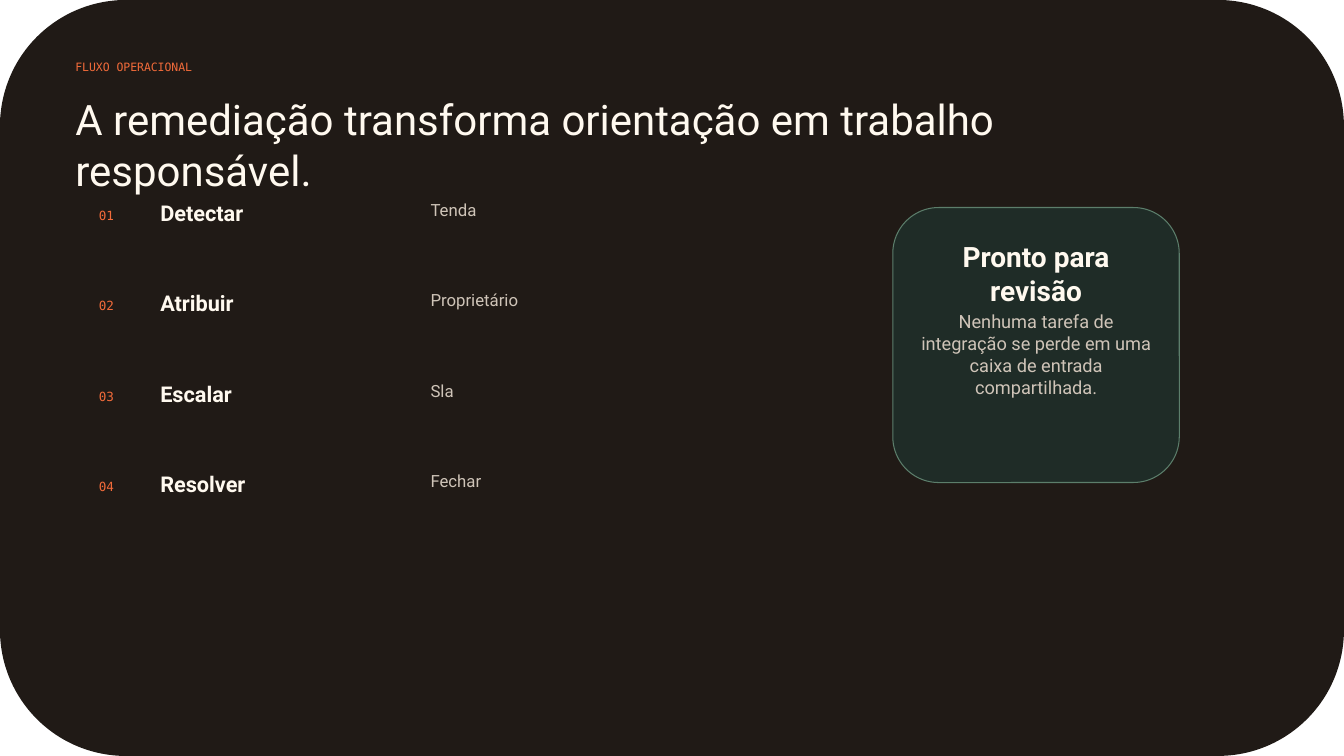
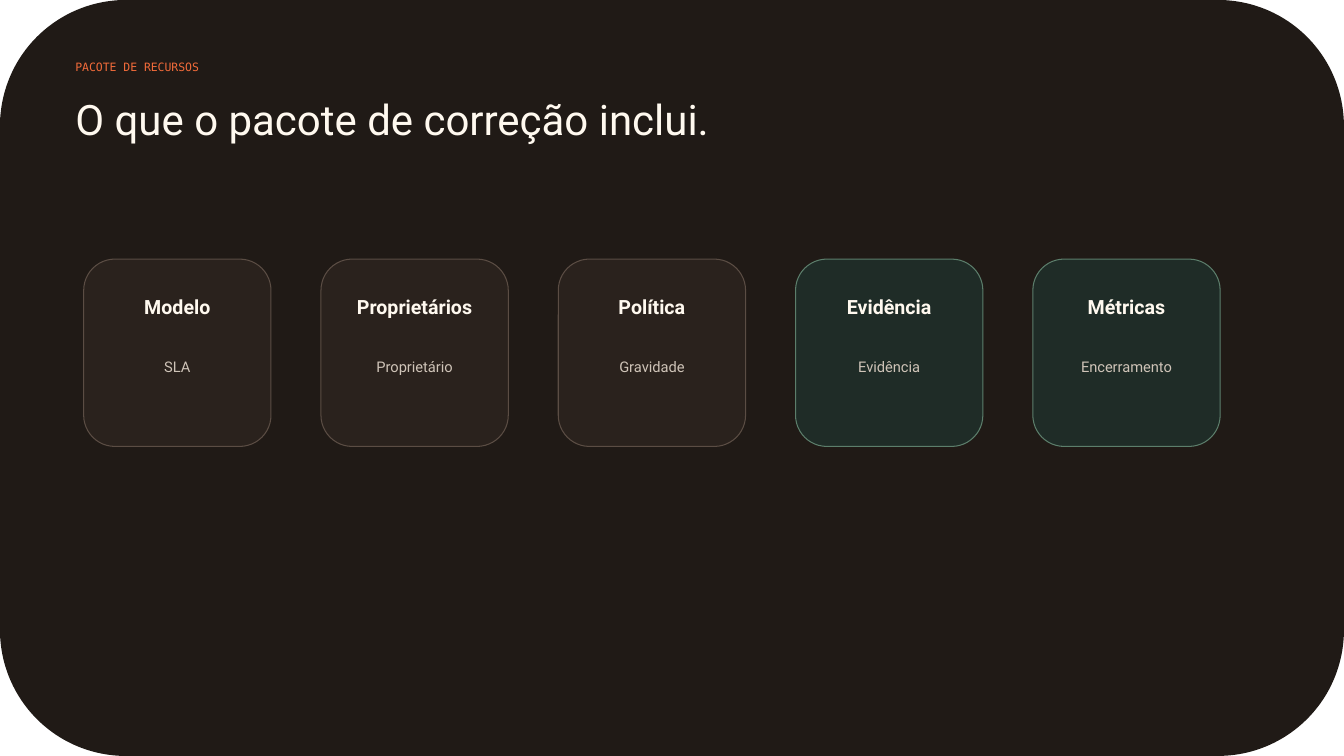
from pptx import Presentation
from pptx.dml.color import RGBColor
from pptx.enum.shapes import MSO_SHAPE as Preset
from pptx.enum.text import MSO_ANCHOR as Anchor, MSO_AUTO_SIZE as AutoSize, PP_ALIGN as Align
from pptx.util import Cm, Pt

SLIDE_WIDTH, SLIDE_HEIGHT = 33.87, 19.05
MARGIN = 1.9
TITLE_ONLY = 5

SANS = "Roboto"
MONO = "DejaVu Sans Mono"

INK = RGBColor(0x20, 0x1A, 0x16)
ORANGE = RGBColor(0xF2, 0x6B, 0x3A)
CREAM = RGBColor(0xFF, 0xF9, 0xEF)
SAND = RGBColor(0xCF, 0xC4, 0xB8)
BROWN_FILL = RGBColor(0x2A, 0x22, 0x1D)
BROWN_LINE = RGBColor(0x5B, 0x4D, 0x44)
GREEN_FILL = RGBColor(0x1F, 0x2C, 0x27)
GREEN_LINE = RGBColor(0x5C, 0x7E, 0x6B)

BROWN = (BROWN_FILL, BROWN_LINE)
GREEN = (GREEN_FILL, GREEN_LINE)

STEPS = [
    ("Detectar", "Tenda"),
    ("Atribuir", "Proprietário"),
    ("Escalar", "Sla"),
    ("Resolver", "Fechar"),
]
RESOURCES = [
    ("Modelo", "SLA", BROWN),
    ("Proprietários", "Proprietário", BROWN),
    ("Política", "Gravidade", BROWN),
    ("Evidência", "Evidência", GREEN),
    ("Métricas", "Encerramento", GREEN),
]


def write_text(shape, text, size, color, font=SANS, bold=False, align=Align.LEFT):
    frame = shape.text_frame
    frame.text = text
    frame.word_wrap = True
    frame.auto_size = AutoSize.NONE
    frame.vertical_anchor = Anchor.TOP
    frame.margin_left = frame.margin_top = frame.margin_right = frame.margin_bottom = 0
    paragraph = frame.paragraphs[0]
    paragraph.alignment = align
    paragraph.font.name = font
    paragraph.font.size = Pt(size)
    paragraph.font.bold = bold
    paragraph.font.color.rgb = color


def add_text(slide, left, top, width, height, text, size, color, **style):
    box = slide.shapes.add_textbox(Cm(left), Cm(top), Cm(width), Cm(height))
    write_text(box, text, size, color, **style)


def add_panel(slide, left, top, width, height, fill, line=None):
    panel = slide.shapes.add_shape(
        Preset.ROUNDED_RECTANGLE, Cm(left), Cm(top), Cm(width), Cm(height))
    panel.shadow.inherit = False
    panel.fill.solid()
    panel.fill.fore_color.rgb = fill
    if line is None:
        panel.line.fill.background()
    else:
        panel.line.color.rgb = line
        panel.line.width = Pt(0.75)
    return panel


def add_titled_slide(presentation, kicker, title_text, title_width):
    slide = presentation.slides.add_slide(presentation.slide_layouts[TITLE_ONLY])
    title = slide.shapes.title
    backdrop = add_panel(slide, 0, 0, SLIDE_WIDTH, SLIDE_HEIGHT, INK)
    title._element.addprevious(backdrop._element)
    add_text(slide, MARGIN, 1.52, 11.66, 0.71, kicker, 8.2, ORANGE, font=MONO)
    title.left, title.top = Cm(MARGIN), Cm(2.36)
    title.width, title.height = Cm(title_width), Cm(1.8)
    write_text(title, title_text, 30, CREAM)
    return slide


def add_steps(slide, left, top, pitch):
    for index, (action, detail) in enumerate(STEPS):
        row_top = top + index * pitch
        add_text(slide, left, row_top + 0.2, 1.4, 0.61, f"{index + 1:02}", 9, ORANGE, font=MONO)
        add_text(slide, left + 1.55, row_top, 7.21, 0.71, action, 15.5, CREAM, bold=True)
        add_text(slide, left + 8.36, row_top, 10, 0.79, detail, 12, SAND)


def add_result_card(slide, left, top, width, height):
    inset = 0.69
    text_width = width - 2 * inset
    add_panel(slide, left, top, width, height, *GREEN)
    add_text(slide, left + inset, top + 0.81, text_width, 1.17,
             "Pronto para revisão", 20, CREAM, bold=True, align=Align.CENTER)
    add_text(slide, left + inset, top + 2.59, text_width, 2.49,
             "Nenhuma tarefa de integração se perde em uma caixa de entrada compartilhada.",
             13, SAND, align=Align.CENTER)


def add_resource_card(slide, left, top, side, name, detail, colors):
    add_panel(slide, left, top, side, side, *colors)
    add_text(slide, left + 0.47, top + 0.91, side - 0.94, 0.84,
             name, 14, CREAM, bold=True, align=Align.CENTER)
    add_text(slide, left + 0.39, top + 2.49, side - 0.78, 1.45,
             detail, 10.5, SAND, align=Align.CENTER)


def add_resource_row(slide, left, top, side, gap):
    for index, resource in enumerate(RESOURCES):
        add_resource_card(slide, left + index * (side + gap), top, side, *resource)


def build_workflow_slide(presentation):
    slide = add_titled_slide(
        presentation, "FLUXO OPERACIONAL",
        "A remediação transforma orientação em trabalho responsável.", 23.9)
    add_steps(slide, 2.49, 5.03, 2.28)
    add_result_card(slide, 22.5, 5.23, 7.22, 6.93)


def build_resources_slide(presentation):
    slide = add_titled_slide(
        presentation, "PACOTE DE RECURSOS", "O que o pacote de correção inclui.", 21.1)
    add_resource_row(slide, 2.11, 6.53, 4.72, 1.26)


def main():
    presentation = Presentation()
    presentation.slide_width = Cm(SLIDE_WIDTH)
    presentation.slide_height = Cm(SLIDE_HEIGHT)
    build_workflow_slide(presentation)
    build_resources_slide(presentation)
    presentation.save("out.pptx")


if __name__ == "__main__":
    main()
